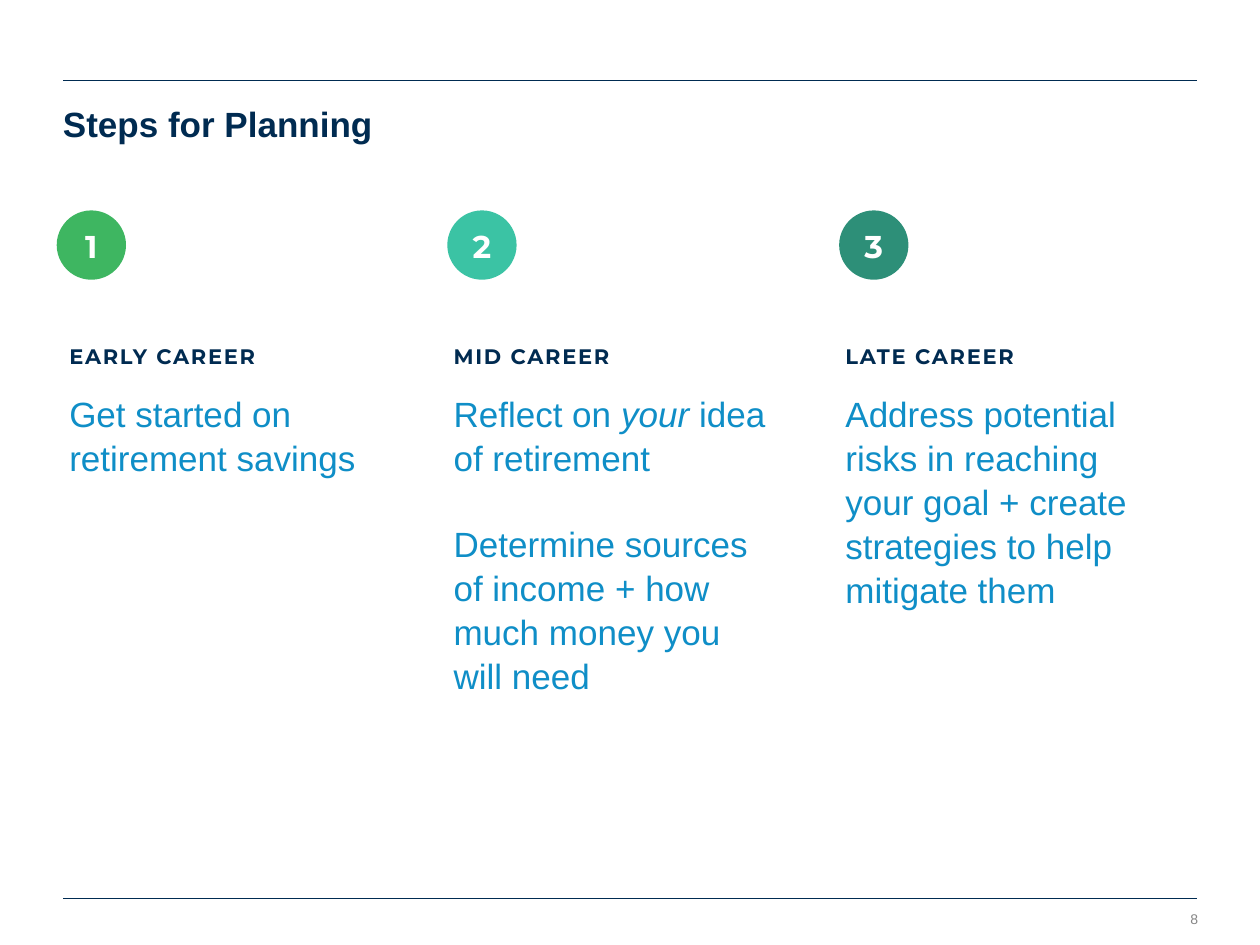
from pptx import Presentation
from pptx import util as u
from pptx.dml.color import RGBColor
from pptx.enum import shapes, text
from pptx.oxml import parse_xml
from pptx.oxml.ns import nsdecls

WIDTH, HEIGHT, MARGIN = 10, 7.5, 0.5
NAVY, BLUE, GREY, WHITE = "002B51", "0F8EC7", "868686", "FFFFFF"
BADGE_SIZE, BADGE_TOP = 0.55, 1.67
TEXT_TOP, TEXT_WIDTH = 2.72, 2.6
LINE_SPACING = 1.05

# badge left, text left, badge colour, heading, body paragraphs (*italic*)
STEPS = [
    (0.45, 0.55, "3EB661", "EARLY CAREER", ["Get started on retirement savings"]),
    (3.55, 3.6, "3BC3A4", "MID CAREER",
     ["Reflect on *your* idea of retirement",
      "Determine sources of income + how much money you \nwill need"]),
    (6.66, 6.71, "2D8F78", "LATE CAREER",
     ["Address potential risks in reaching \n"
      "your goal + create strategies to help mitigate them"]),
]


def rgb(value):
    return RGBColor.from_string(value)


def write(paragraph, content, size, color, font="Arial", bold=False, spacing=0):
    """Fill a paragraph; *stars* mark italics and newlines are line breaks."""
    paragraph.line_spacing = LINE_SPACING
    for row, line in enumerate(content.split("\n")):
        if row:
            paragraph.add_line_break()
        for index, piece in enumerate(line.split("*")):
            run = paragraph.add_run()
            run.text = piece
            run.font.size = u.Pt(size)
            run.font.name = font
            run.font.bold = bold
            run.font.italic = index % 2 == 1
            run.font.color.rgb = rgb(color)
            if spacing:
                run.font._element.set("spc", str(spacing * 100))


def add_text_box(slide, left, top, width, height, wrap=True):
    box = slide.shapes.add_textbox(*map(u.Inches, (left, top, width, height)))
    frame = box.text_frame
    frame.word_wrap = wrap
    frame.margin_left = frame.margin_right = 0
    frame.margin_top = frame.margin_bottom = 0
    return frame


def add_rule(slide, top, weight):
    line = slide.shapes.add_connector(
        shapes.MSO_CONNECTOR.STRAIGHT, u.Inches(MARGIN), u.Inches(top),
        u.Inches(WIDTH - MARGIN), u.Inches(top))
    line.line.color.rgb = rgb(NAVY)
    line.line.width = u.Pt(weight)
    line._element.spPr.append(parse_xml(f"<a:effectLst {nsdecls('a')}/>"))


def add_header(slide, title):
    add_rule(slide, 0.64, 1)
    frame = add_text_box(slide, MARGIN, 0.8, WIDTH - 2 * MARGIN, 0.34)
    write(frame.paragraphs[0], title, 20, NAVY, bold=True)


def add_footer(slide, number):
    add_rule(slide, 7.13, 0.5)
    frame = add_text_box(slide, 9.37, 7.22, 0.14, 0.13, wrap=False)
    paragraph = frame.paragraphs[0]
    paragraph.alignment = text.PP_ALIGN.RIGHT
    write(paragraph, number, 8, GREY)


def add_badge(slide, left, color, number):
    badge = slide.shapes.add_shape(
        shapes.MSO_SHAPE.OVAL, u.Inches(left), u.Inches(BADGE_TOP),
        u.Inches(BADGE_SIZE), u.Inches(BADGE_SIZE))
    badge.shadow.inherit = False
    badge.fill.solid()
    badge.fill.fore_color.rgb = rgb(color)
    badge.line.fill.background()
    badge.text_frame.vertical_anchor = text.MSO_ANCHOR.MIDDLE
    paragraph = badge.text_frame.paragraphs[0]
    paragraph.alignment = text.PP_ALIGN.CENTER
    write(paragraph, str(number), 18, WHITE, "Montserrat", bold=True)


def add_step(slide, number, badge_left, text_left, color, heading, body):
    add_badge(slide, badge_left, color, number)
    frame = add_text_box(slide, text_left, TEXT_TOP, TEXT_WIDTH, 2.73)
    title = frame.paragraphs[0]
    title.space_after = u.Pt(12)
    write(title, heading, 12, NAVY, "Montserrat", bold=True, spacing=1)
    for index, content in enumerate(body):
        paragraph = frame.add_paragraph()
        if index:
            paragraph.space_before = u.Pt(24)
        write(paragraph, content, 20, BLUE)


def main():
    presentation = Presentation()
    presentation.slide_width = u.Inches(WIDTH)
    presentation.slide_height = u.Inches(HEIGHT)
    slide = presentation.slides.add_slide(presentation.slide_layouts[6])
    add_header(slide, "Steps for Planning")
    for number, step in enumerate(STEPS, start=1):
        add_step(slide, number, *step)
    add_footer(slide, "8")
    presentation.save("out.pptx")


if __name__ == "__main__":
    main()
